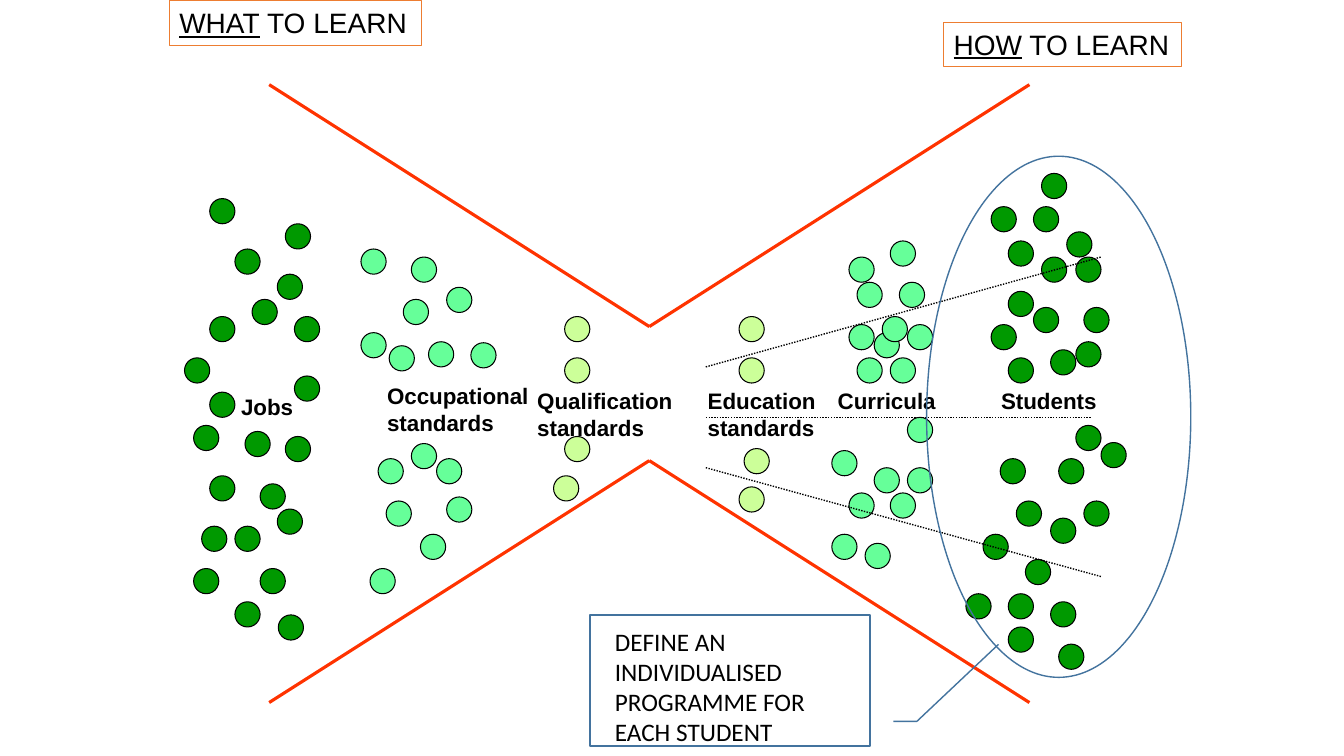
from dataclasses import dataclass

from lxml import etree
from pptx import Presentation
from pptx.dml.color import RGBColor
from pptx.enum.dml import MSO_LINE
from pptx.enum.shapes import MSO_CONNECTOR, MSO_SHAPE
from pptx.enum.text import MSO_ANCHOR, MSO_AUTO_SIZE, PP_ALIGN
from pptx.oxml.ns import qn
from pptx.util import Inches, Pt


@dataclass(frozen=True)
class Theme:
    white: str = "FFFFFF"
    black: str = "000000"
    red: str = "FF3300"
    orange: str = "ED7D31"
    blue: str = "43739E"
    dark_green: str = "009900"
    mint: str = "66FF99"
    lime: str = "CCFF99"
    label_font: str = "Arial"
    note_font: str = "Calibri"
    title_size: int = 20
    note_size: int = 18
    label_size: int = 16


T = Theme()
DOT = 0.25


@dataclass(frozen=True)
class Stage:
    """A labelled cloud of dots; label and dots are offsets from the stage corner."""
    left: float
    label: tuple
    lines: tuple
    colour: str
    dots: tuple
    centred: bool = False


STAGE_TOP = 1
STAGES = (
    Stage(1, (1.14, 2.85, 1.08, 0.64), ("Jobs ",), T.dark_green, (
        (1.08, 0.97), (1.33, 1.47), (1.5, 1.97), (1.83, 1.22), (1.08, 2.14),
        (0.83, 2.55), (1.08, 3.72), (1.58, 3.8), (1, 4.22), (1.58, 4.64),
        (1.92, 2.14), (0.92, 3.22), (1.33, 4.22), (0.92, 4.64), (1.33, 4.97),
        (1.75, 4.05), (1.75, 1.72), (1.08, 2.89), (1.92, 2.73), (1.43, 3.28),
        (1.83, 3.33), (1.76, 5.1)), centred=True),
    Stage(3, (0.74, 2.74, 1.69, 0.64), ("Occupational", "standards"), T.mint, (
        (0.58, 2.3), (0.75, 3.55), (1.25, 2.39), (0.83, 3.97), (1.33, 3.55),
        (1, 1.97), (0.58, 1.47), (0.67, 4.64), (1.08, 1.55), (1.17, 4.3),
        (1.43, 1.85), (1.43, 3.93), (0.86, 2.43), (1.08, 3.4), (1.67, 2.4))),
    Stage(5, (0.23, 2.79, 1.55, 0.64), ("Qualification", "standards"), T.lime, (
        (0.49, 3.72), (0.6, 2.55), (0.6, 3.33), (0.6, 2.14))),
    Stage(7, (-0.08, 2.79, 1.29, 0.64), ("Education", "standards"), T.lime, (
        (0.33, 3.83), (0.33, 2.55), (0.38, 3.45), (0.33, 2.14))),
    Stage(8, (0.21, 2.79, 1.18, 0.37), ("Curricula",), T.mint, (
        (0.83, 2.55), (1, 3.14), (0.5, 2.55), (0.42, 2.22), (0.92, 1.8),
        (0.83, 3.89), (0.42, 3.89), (0.58, 4.39), (0.5, 1.8), (0.83, 1.39),
        (0.42, 1.55), (1, 2.22), (0.67, 2.3), (0.75, 2.14), (1, 3.64),
        (0.25, 4.3), (0.67, 3.64), (0.25, 3.47))),
    Stage(9, (0.83, 2.79, 1.15, 0.37), ("Students",), T.dark_green, (
        (0.83, 1.05), (1, 1.39), (1.25, 2.05), (1.58, 1.3), (0.83, 2.22),
        (1.75, 2.05), (1.92, 3.39), (0.92, 3.55), (1.42, 4.14), (0.75, 4.3),
        (1.42, 4.97), (1.67, 2.39), (1.5, 3.55), (1.25, 1.05), (1.33, 1.55),
        (1.42, 2.47), (1.75, 3.97), (1.08, 3.97), (1.17, 4.55), (1, 4.89),
        (1.5, 5.39), (1.33, 0.72), (1, 1.89), (1.67, 1.55), (1, 2.55),
        (1.67, 3.22), (0.58, 4.89), (1, 5.22))),
)


def rgb(colour):
    return RGBColor.from_string(colour)


def add_box(slide, kind, box, fill=None, line=None, width=0.75):
    sp = slide.shapes.add_shape(kind, *map(Inches, box))
    sp.shadow.inherit = False
    if fill:
        sp.fill.solid()
        sp.fill.fore_color.rgb = rgb(fill)
    else:
        sp.fill.background()
    if line:
        sp.line.color.rgb = rgb(line)
        sp.line.width = Pt(width)
    else:
        sp.line.fill.background()
    return sp


def add_line(slide, start, end, colour, width, dash=None):
    cx = slide.shapes.add_connector(MSO_CONNECTOR.STRAIGHT, *map(Inches, start + end))
    cx.line.color.rgb = rgb(colour)
    cx.line.width = Pt(width)
    if dash:
        cx.line.dash_style = dash
    etree.SubElement(cx._element.spPr, qn("a:effectLst"))


def set_text(sp, paragraphs, size, font=T.label_font, bold=False,
             align=PP_ALIGN.LEFT, wrap=False):
    """Fill a shape; each paragraph is a list of (text, underlined) runs."""
    tf = sp.text_frame
    tf.word_wrap = wrap
    tf.auto_size = MSO_AUTO_SIZE.SHAPE_TO_FIT_TEXT
    tf.vertical_anchor = MSO_ANCHOR.TOP
    for i, runs in enumerate(paragraphs):
        p = tf.add_paragraph() if i else tf.paragraphs[0]
        p.alignment = align
        for text, underlined in runs:
            r = p.add_run()
            r.text = text
            r.font.name = font
            r.font.size = Pt(size)
            r.font.bold = bold
            r.font.underline = underlined
            r.font.color.rgb = rgb(T.black)


def draw_bow_tie(slide, left, top, width, height):
    middle, depth = left + width / 2, 2.4
    for x in (left, left + width):
        add_line(slide, (x, top), (middle, top + depth), T.red, 2.25)
        add_line(slide, (x, top + height), (middle, top + height - depth), T.red, 2.25)


def draw_stage(slide, stage, left, top):
    x, y, w, h = stage.label
    label = add_box(slide, MSO_SHAPE.RECTANGLE, (left + x, top + y, w, h),
                    fill=None if stage.centred else T.white)
    set_text(label, [[(line, False)] for line in stage.lines], T.label_size, bold=True,
             align=PP_ALIGN.CENTER if stage.centred else PP_ALIGN.LEFT,
             wrap=stage.centred)
    for x, y in stage.dots:
        add_box(slide, MSO_SHAPE.OVAL, (left + x, top + y, DOT, DOT),
                stage.colour, T.black)


def draw_fan(slide, left, middle):
    """Dotted lines that spread from the education standards to the students."""
    for start, length, rise in ((-0.5, 3.92, -1.09), (0.5, 3.92, 1.08), (0, 3.83, 0)):
        y = middle + start
        add_line(slide, (left, y), (left + length, y + rise), T.black, 1,
                 MSO_LINE.ROUND_DOT)


def draw_heading(slide, box, question):
    sp = add_box(slide, MSO_SHAPE.RECTANGLE, box, T.white, T.orange)
    set_text(sp, [[(question, True), (" TO LEARN", False)]], T.title_size)


def draw_callout(slide, left, top, width, height):
    note = slide.shapes.add_textbox(*map(Inches, (left + 0.15, top + 0.06, 2.32, 1.31)))
    set_text(note, [[("DEFINE AN INDIVIDUALISED PROGRAMME FOR EACH STUDENT", False)]],
             T.note_size, T.note_font, wrap=True)
    frame = add_box(slide, MSO_SHAPE.LINE_CALLOUT_2, (left, top, width, height),
                    line=T.blue, width=1)
    frame.rotation = 180
    for i, value in enumerate((0.188, -0.083, 0.188, -0.167, 0.775, -0.458)):
        frame.adjustments[i] = value


def main():
    prs = Presentation()
    prs.slide_width, prs.slide_height = Inches(13.33), Inches(7.5)
    slide = prs.slides.add_slide(prs.slide_layouts[6])
    draw_bow_tie(slide, 2.67, 0.84, 7.54, 6.13)
    for stage in STAGES:
        draw_stage(slide, stage, stage.left, STAGE_TOP)
    draw_fan(slide, 7, 4.14)
    draw_heading(slide, (1.68, 0.01, 2.5, 0.44), "WHAT")
    draw_heading(slide, (9.36, 0.22, 2.36, 0.44), "HOW")
    add_box(slide, MSO_SHAPE.OVAL, (9.19, 1.55, 2.62, 5.17), line=T.blue, width=1)
    draw_callout(slide, 5.85, 6.1, 2.78, 1.3)
    prs.save("out.pptx")


if __name__ == "__main__":
    main()
